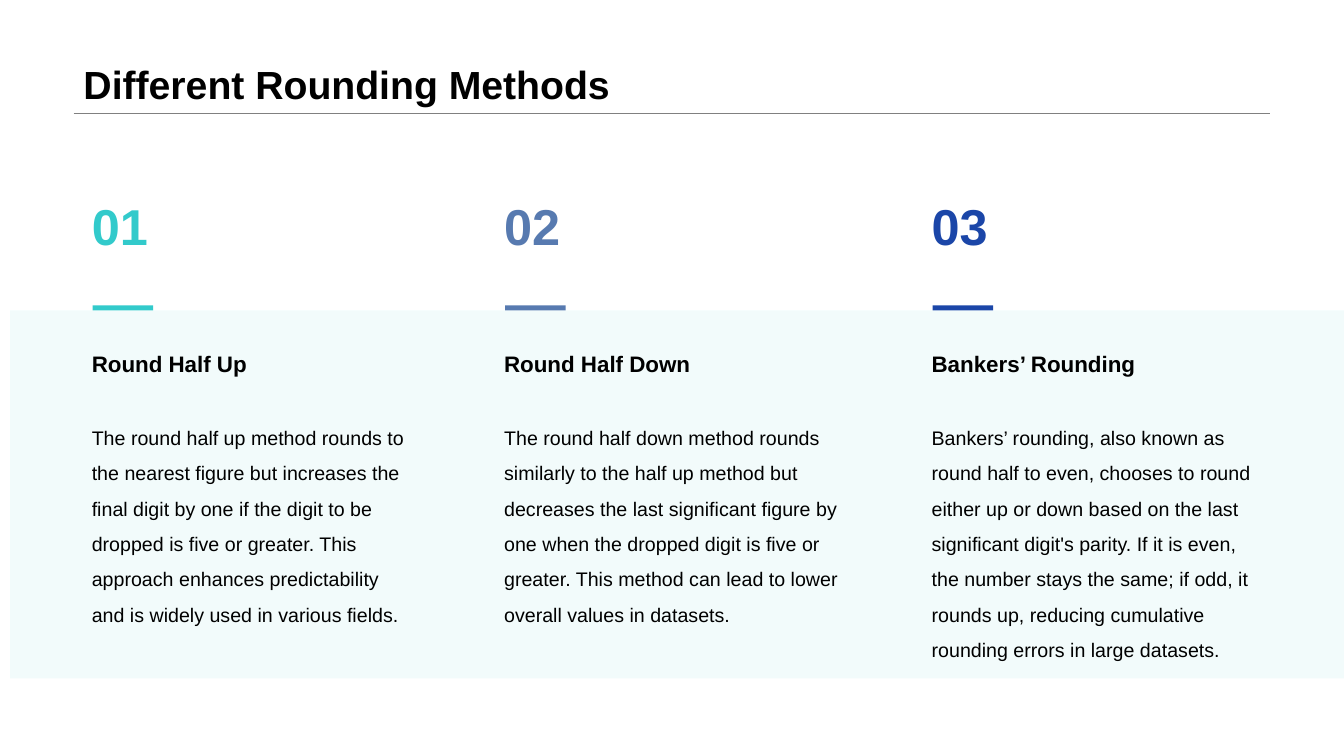
from dataclasses import dataclass

from lxml import etree
from pptx import Presentation
from pptx import util as u
from pptx.dml.color import RGBColor
from pptx.enum import shapes, text
from pptx.oxml.ns import qn


@dataclass(frozen=True)
class Theme:
    """Colours, type sizes and spacing of the slide."""
    font: str = "Arial"
    ink: str = "000000"
    rule: str = "808080"
    panel: str = "D6F5F5"
    panel_opacity: int = 30
    title: int = 28
    number: int = 36
    heading: int = 16
    body: int = 14
    inset: float = 0.12


@dataclass(frozen=True)
class Box:
    """A region in inches."""
    left: float
    top: float
    width: float
    height: float

    def band(self, top, height):
        """Return a full-width band placed relative to this region."""
        return Box(self.left, self.top + top, self.width, height)

    def emu(self):
        """Return the region as slide lengths."""
        return [u.Inches(v) for v in (self.left, self.top, self.width, self.height)]


THEME = Theme()
WIDTH, HEIGHT = 13.33, 7.5
TITLE = Box(0.73, 0, 11.87, 1.12)
PANEL = Box(0.1, 3.08, WIDTH, 3.65)
COLUMN_TOP = 1.82
BODY_OFFSET = 2.17
METHODS = [
    (0.79, 3.42, 2.67, "32CACB", "Round Half Up",
     "The round half up method rounds to the nearest figure but increases the final digit "
     "by one if the digit to be dropped is five or greater. This approach enhances "
     "predictability and is widely used in various fields."),
    (4.88, 3.58, 2.32, "577AB0", "Round Half Down",
     "The round half down method rounds similarly to the half up method but decreases the "
     "last significant figure by one when the dropped digit is five or greater. This method "
     "can lead to lower overall values in datasets."),
    (9.12, 3.58, 2.32, "1B46A8", "Bankers’ Rounding",
     "Bankers’ rounding, also known as round half to even, chooses to round either up or "
     "down based on the last significant digit's parity. If it is even, the number stays "
     "the same; if odd, it rounds up, reducing cumulative rounding errors in large datasets."),
]


def add_text(slide, box, words, size, color=THEME.ink, bold=True, bottom=False,
             spacing=1.0, insets=(THEME.inset, THEME.inset)):
    """Place one paragraph in a wrapping text box."""
    frame = slide.shapes.add_textbox(*box.emu()).text_frame
    frame.word_wrap = True
    frame.margin_left = frame.margin_right = u.Inches(insets[0])
    frame.margin_top = frame.margin_bottom = u.Inches(insets[1])
    frame.vertical_anchor = text.MSO_ANCHOR.BOTTOM if bottom else text.MSO_ANCHOR.TOP
    paragraph = frame.paragraphs[0]
    paragraph.text = words
    paragraph.line_spacing = spacing
    paragraph.font.name = THEME.font
    paragraph.font.size = u.Pt(size)
    paragraph.font.bold = bold
    paragraph.font.color.rgb = RGBColor.from_string(color)


def add_block(slide, box, color, kind=shapes.MSO_SHAPE.RECTANGLE):
    """Place a plain filled shape without outline or shadow."""
    block = slide.shapes.add_shape(kind, *box.emu())
    block.shadow.inherit = False
    block.fill.solid()
    block.fill.fore_color.rgb = RGBColor.from_string(color)
    block.line.fill.background()
    return block


def add_title(slide, box):
    """Place the title with a rule along the bottom of its box."""
    bottom = u.Inches(box.top + box.height)
    rule = slide.shapes.add_connector(
        shapes.MSO_CONNECTOR.STRAIGHT, u.Inches(box.left), bottom,
        u.Inches(box.left + box.width), bottom)
    rule.line.color.rgb = RGBColor.from_string(THEME.rule)
    rule.line.width = u.Pt(0.25)
    etree.SubElement(rule._element.spPr, qn("a:effectLst"))
    add_text(slide, box, "Different Rounding Methods", THEME.title, bottom=True,
             spacing=0.9, insets=(0.1, 0.05))


def add_panel(slide, box):
    """Place the translucent band behind the explanations."""
    panel = add_block(slide, box, THEME.panel, shapes.MSO_SHAPE.ROUNDED_RECTANGLE)
    panel.adjustments[0] = 0
    color = panel._element.spPr.find(qn("a:solidFill"))[0]
    etree.SubElement(color, qn("a:alpha"), val=str(THEME.panel_opacity * 1000))


def add_method(slide, box, number, color, heading, body):
    """Place one numbered method: number, accent bar, heading and explanation."""
    add_text(slide, box.band(1.53, 0.51), heading, THEME.heading)
    add_text(slide, box.band(BODY_OFFSET, box.height - BODY_OFFSET), body, THEME.body,
             bold=False, spacing=1.5)
    add_text(slide, box.band(0, 0.84), f"{number:02}", THEME.number, color, bottom=True)
    add_block(slide, Box(box.left + 0.13, box.top + 1.21, 0.6, 0.05), color)


def main():
    """Build and save the slide."""
    presentation = Presentation()
    presentation.slide_width = u.Inches(WIDTH)
    presentation.slide_height = u.Inches(HEIGHT)
    slide = presentation.slides.add_slide(presentation.slide_layouts[6])
    add_title(slide, TITLE)
    add_panel(slide, PANEL)
    for number, (left, width, body_height, *content) in enumerate(METHODS, 1):
        column = Box(left, COLUMN_TOP, width, BODY_OFFSET + body_height)
        add_method(slide, column, number, *content)
    presentation.save("out.pptx")


if __name__ == "__main__":
    main()
